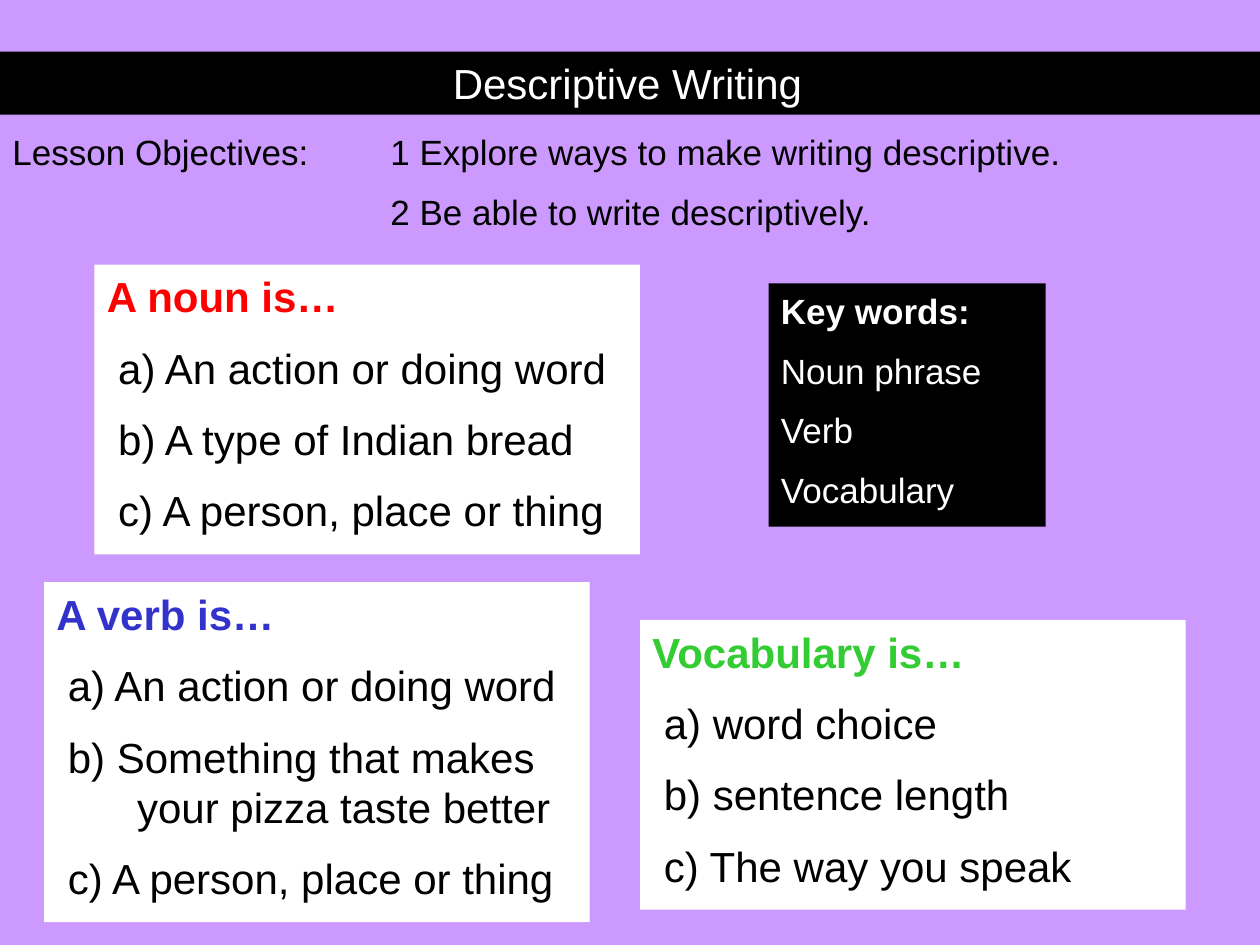
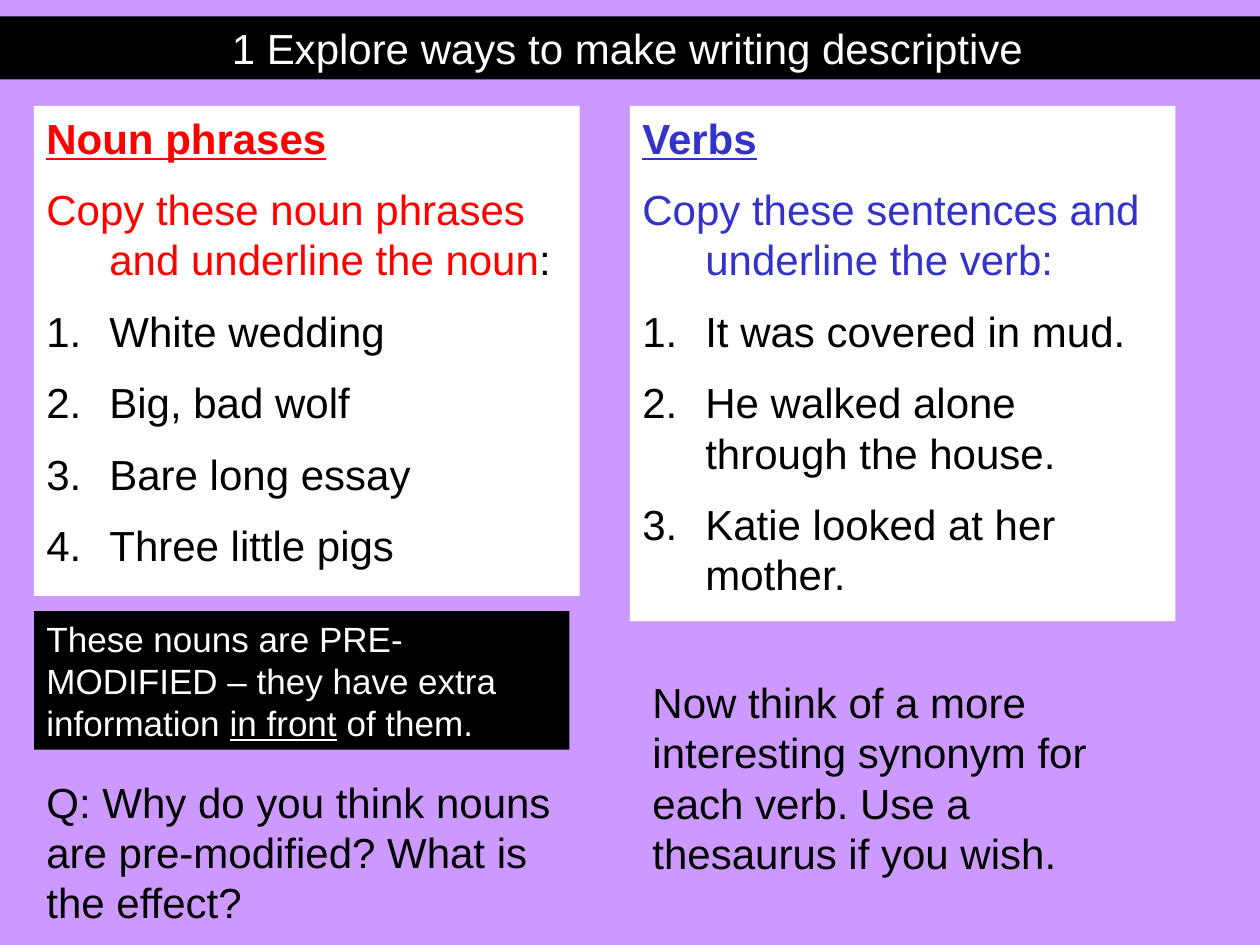
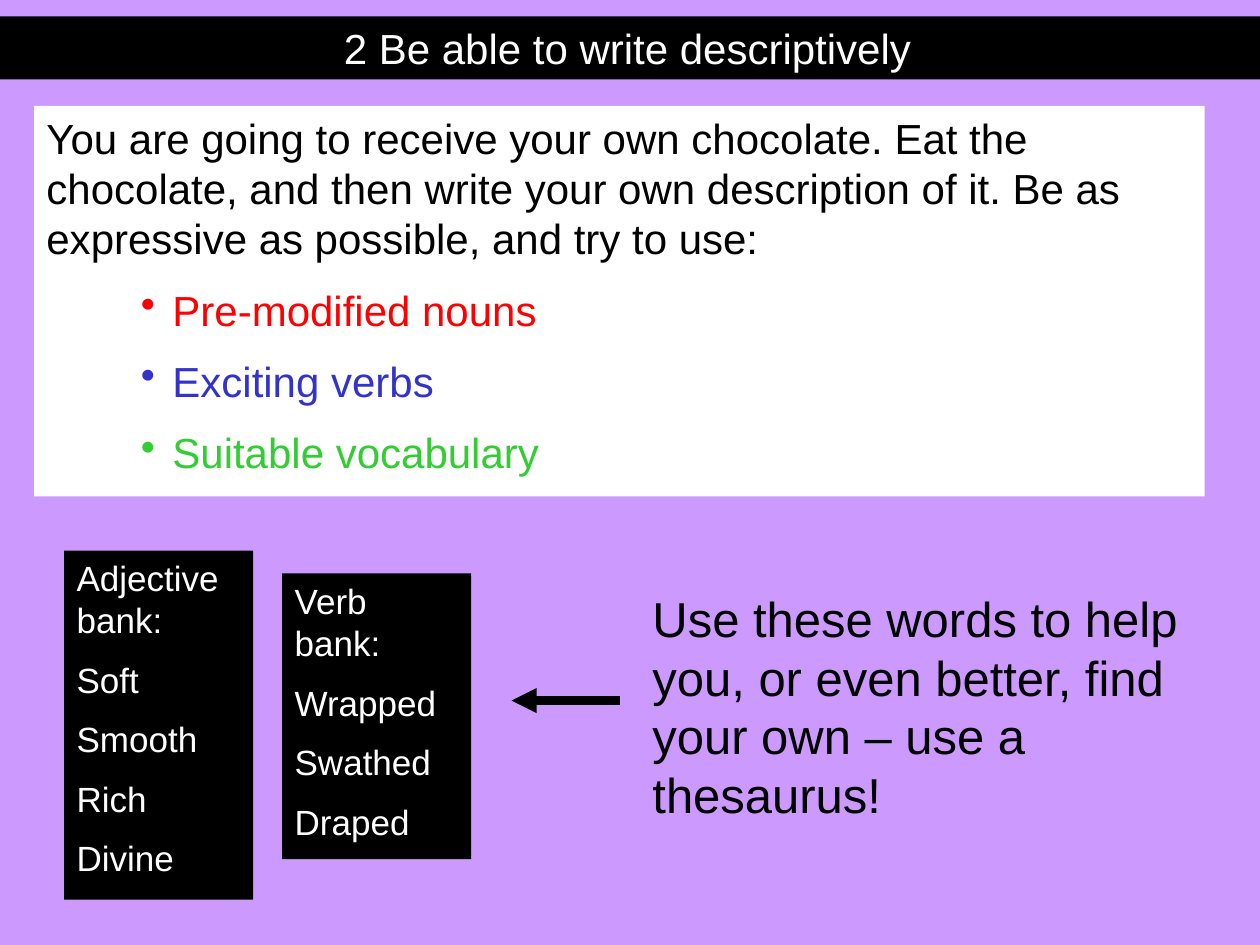
"""Build a three-slide lesson on descriptive writing."""
from dataclasses import dataclass

from lxml import etree
from pptx import Presentation, util as u
from pptx.dml.color import RGBColor
from pptx.enum import shapes, text
from pptx.oxml import ns


@dataclass(frozen=True)
class Theme:
    page: str = "CC99FF"
    black: str = "000000"
    white: str = "FFFFFF"
    noun: str = "FF0000"
    verb: str = "3333CC"
    vocabulary: str = "33CC33"
    font: str = "Arial"
    small: int = 20
    body: int = 24
    large: int = 28
    leading: float = 1.2
    gap: float = 0.5


T = Theme()
PX = 9144
STYLES = {
    "plain": {},
    "heading": {"marL": 50, "indent": -50},
    "number": {"marL": 50, "indent": -50, "mark": ("a:buAutoNum", {"type": "arabicPeriod"})},
    "bullet": {"marL": 100, "indent": -25, "mark": ("a:buChar", {"char": "•"})},
    "option": {"marL": 64, "indent": -55},
    "objective": {"marL": 300, "indent": 0},
    "tabbed": {"tab": 300},
}


def add_mark(parent, tag, attributes):
    """Append one DrawingML element with its attributes."""
    return etree.SubElement(parent, ns.qn(tag), attributes)


def add_panel(slide, box, paragraphs, size=T.body, fill=None, align=text.PP_ALIGN.LEFT):
    """Place a text panel; each paragraph is a style name and (text, colour, format) runs."""
    place = [u.Emu(length * PX) for length in box]
    if fill:
        panel = slide.shapes.add_shape(shapes.MSO_SHAPE.RECTANGLE, *place)
        panel.shadow.inherit = False
        panel.fill.solid()
        panel.fill.fore_color.rgb = RGBColor.from_string(fill)
        panel.line.fill.background()
    else:
        panel = slide.shapes.add_textbox(*place)
    frame = panel.text_frame
    frame.word_wrap = True
    frame.vertical_anchor = text.MSO_ANCHOR.TOP
    for index, (style, *runs) in enumerate(paragraphs):
        paragraph = frame.add_paragraph() if index else frame.paragraphs[0]
        layout = STYLES[style]
        properties = paragraph._p.get_or_add_pPr()
        for key in ("marL", "indent"):
            if key in layout:
                properties.set(key, str(layout[key] * PX))
        if "mark" in layout:
            add_mark(properties, *layout["mark"])
        if "tab" in layout:
            stops = add_mark(properties, "a:tabLst", {})
            add_mark(stops, "a:tab", {"pos": str(layout["tab"] * PX), "algn": "l"})
        paragraph.alignment = align
        paragraph.line_spacing = u.Pt(size * T.leading)
        paragraph.space_before = u.Pt(size * T.gap if index else 0)
        for words, colour, *formats in runs:
            run = paragraph.add_run()
            run.text = words
            values = {"name": T.font, "size": u.Pt(size)}
            for extra in formats:
                values.update(extra)
            for key, value in values.items():
                setattr(run.font, key, value)
            run.font.color.rgb = RGBColor.from_string(colour)


BOLD = {"bold": True}
UNDERLINE = {"underline": True}

deck = Presentation()
deck.slide_width, deck.slide_height = u.Emu(1000 * PX), u.Emu(750 * PX)

lesson_slides = []
for title, top in (
    ("Descriptive Writing", 41),
    ("1 Explore ways to make writing descriptive", 13),
    ("2 Be able to write descriptively", 13),
):
    slide = deck.slides.add_slide(deck.slide_layouts[6])
    slide.background.fill.solid()
    slide.background.fill.fore_color.rgb = RGBColor.from_string(T.page)
    add_panel(slide, (-4, top, 1004, 50), [("plain", (title, T.white))],
              fill=T.black, align=text.PP_ALIGN.CENTER)
    lesson_slides.append(slide)
starter, explore, write = lesson_slides

add_panel(starter, (0, 99, 1000, 93), [
    ("tabbed", ("Lesson Objectives:\t1 Explore ways to make writing descriptive.", T.black)),
    ("objective", ("2 Be able to write descriptively.", T.black)),
], T.small)
key_words = [("plain", ("Key words:", T.white, BOLD))]
key_words += [("plain", (word, T.white)) for word in ("Noun phrase", "Verb", "Vocabulary")]
add_panel(starter, (610, 225, 220, 193), key_words, T.small, T.black)

for question, colour, box, options in (
    ("A noun is…", T.noun, (75, 210, 433, 230),
     ("a) An action or doing word", "b) A type of Indian bread", "c) A person, place or thing")),
    ("A verb is…", T.verb, (35, 462, 433, 270),
     ("a) An action or doing word", "b) Something that makes your pizza taste better",
      "c) A person, place or thing")),
    ("Vocabulary is…", T.vocabulary, (508, 492, 433, 230),
     ("a) word choice", "b) sentence length", "c) The way you speak")),
):
    quiz = [("plain", (question, colour, BOLD))]
    quiz += [("option", (option, T.black)) for option in options]
    add_panel(starter, box, quiz, fill=T.white)

add_panel(explore, (27, 485, 425, 110), [
    ("plain",
     ("These nouns are PRE-MODIFIED – they have extra information ", T.white),
     ("in front", T.white, UNDERLINE),
     (" of them.", T.white)),
], T.small, T.black)
for heading, colour, box, task, examples in (
    ("Noun phrases", T.noun, (27, 84, 433, 389),
     [("Copy these noun phrases and underline the noun", T.noun), (":", T.black)],
     ("White wedding", "Big, bad wolf", "Bare long essay", "Three little pigs")),
    ("Verbs", T.verb, (500, 84, 433, 409),
     [("Copy these sentences and underline the verb:", T.verb)],
     ("It was covered in mud.", "He walked alone through the house.",
      "Katie looked at her mother.")),
):
    exercise = [("heading", (heading, colour, BOLD, UNDERLINE)), ("heading", *task)]
    exercise += [("number", (example, T.black)) for example in examples]
    add_panel(explore, box, exercise, fill=T.white)

for slide, box, prompt, size in (
    (explore, (27, 611, 425, 130),
     "Q: Why do you think nouns are pre-modified? What is the effect?", T.body),
    (explore, (508, 532, 425, 170),
     "Now think of a more interesting synonym for each verb. Use a thesaurus if you wish.",
     T.body),
    (write, (508, 462, 488, 197),
     "Use these words to help you, or even better, find your own – use a thesaurus!", T.large),
):
    add_panel(slide, box, [("plain", (prompt, T.black))], size)

add_panel(write, (27, 84, 929, 310), [
    ("plain", ("You are going to receive your own chocolate. Eat the chocolate, and then write "
               "your own description of it. Be as expressive as possible, and try to use:",
               T.black)),
    ("bullet", ("Pre-modified nouns", T.noun)),
    ("bullet", ("Exciting verbs", T.verb)),
    ("bullet", ("Suitable vocabulary", T.vocabulary)),
], fill=T.white)
for box, bank in (
    ((51, 437, 150, 277), ("Adjective bank:", "Soft", "Smooth", "Rich", "Divine")),
    ((224, 455, 150, 227), ("Verb bank:", "Wrapped", "Swathed", "Draped")),
):
    add_panel(write, box, [("plain", (word, T.white)) for word in bank], T.small, T.black)

ends = [u.Emu(length * PX) for length in (492, 556, 406, 556)]
arrow = write.shapes.add_connector(shapes.MSO_CONNECTOR.STRAIGHT, *ends)
arrow.line.width = u.Pt(4.75)
arrow.line.color.rgb = RGBColor.from_string(T.black)
add_mark(arrow.line._get_or_add_ln(), "a:tailEnd", {"type": "triangle"})
add_mark(arrow._element.spPr, "a:effectLst", {})

deck.save("out.pptx")
